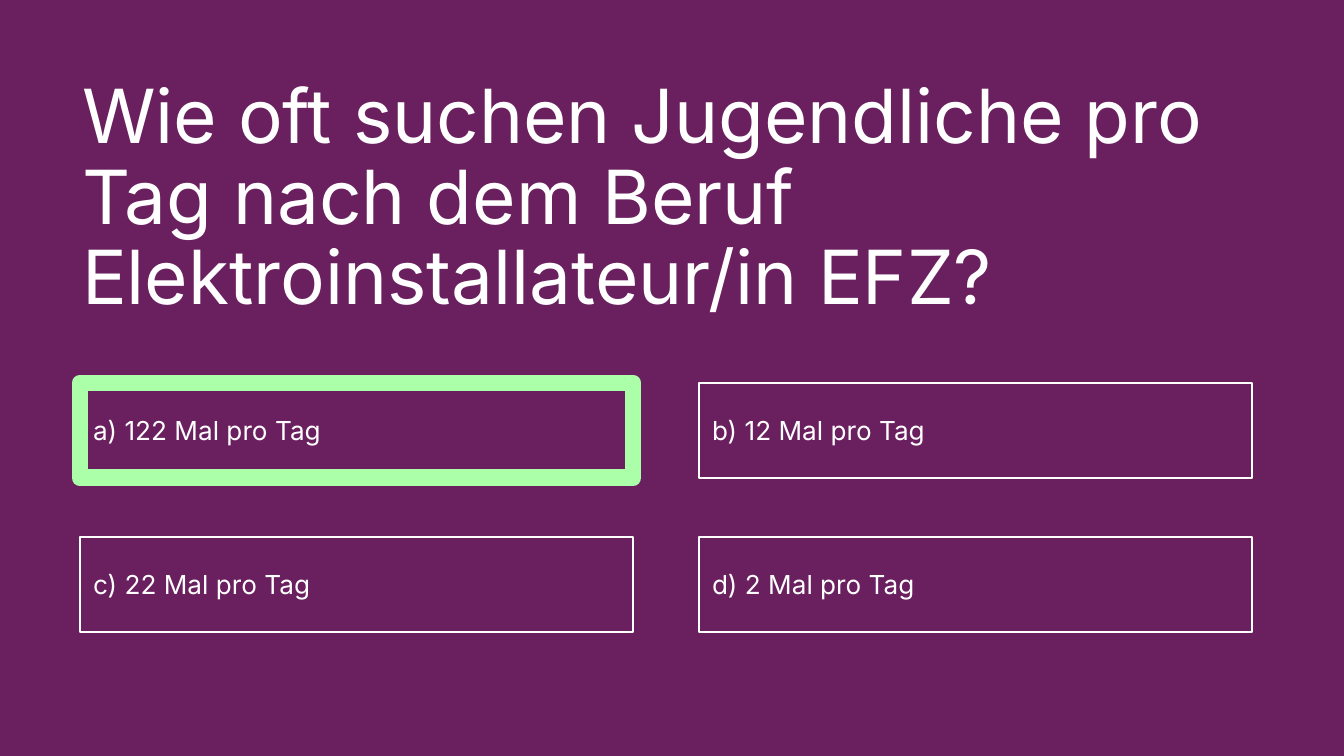
from pptx import Presentation
from pptx.dml.color import RGBColor
from pptx.enum.shapes import MSO_SHAPE
from pptx.enum.text import MSO_ANCHOR, MSO_AUTO_SIZE, PP_ALIGN
from pptx.util import Pt

PURPLE = RGBColor(0x6A, 0x20, 0x5F)
WHITE = RGBColor(0xFF, 0xFF, 0xFF)
GREEN = RGBColor(0xAA, 0xFF, 0xA8)
SCALE = 914400 / 134.4


def px(n):
    return round(n * SCALE)


def write(shape, text, size, pad, frame, para):
    box = shape.text_frame
    sides = ("left", "top", "right", "bottom")
    frame = {"word_wrap": True, **{f"margin_{s}": px(pad) for s in sides}, **frame}
    for key, val in frame.items():
        setattr(box, key, val)
    line = box.paragraphs[0]
    for key, val in para.items():
        setattr(line, key, val)
    run = line.add_run()
    run.text = text
    for key, val in {"name": "Inter", "size": Pt(size)}.items():
        setattr(run.font, key, val)
    run.font.color.rgb = WHITE


deck = Presentation()
deck.slide_width, deck.slide_height = px(1344), px(756)
slide = deck.slides.add_slide(deck.slide_layouts[6])
slide.background.fill.solid()
slide.background.fill.fore_color.rgb = PURPLE

title = slide.shapes.add_textbox(px(82), px(79), px(1140), px(245))
write(title, "Wie oft suchen Jugendliche pro Tag nach dem Beruf Elektroinstallateur/in EFZ?",
      40, 0, {"auto_size": MSO_AUTO_SIZE.SHAPE_TO_FIT_TEXT}, {"line_spacing": 0.9})

LEFT, TOP, WIDE, HIGH = 80, 383, 553, 95
STEP_X, STEP_Y = 619, 154
texts = ["a) 122 Mal pro Tag", "b) 12 Mal pro Tag", "c) 22 Mal pro Tag", "d) 2 Mal pro Tag"]
cells = [(i, text, WHITE, 0.75) for i, text in enumerate(texts)]
cells.append((0, "", GREEN, 9))

for i, text, color, width in cells:
    row, col = divmod(i, 2)
    card = slide.shapes.add_shape(MSO_SHAPE.RECTANGLE, px(LEFT + col * STEP_X),
                                  px(TOP + row * STEP_Y), px(WIDE), px(HIGH))
    card.shadow.inherit = False
    card.fill.background()
    card.line.color.rgb = color
    card.line.width = Pt(width)
    if text:
        write(card, text, 14, 13, {"vertical_anchor": MSO_ANCHOR.MIDDLE},
              {"alignment": PP_ALIGN.LEFT})

deck.save("out.pptx")
